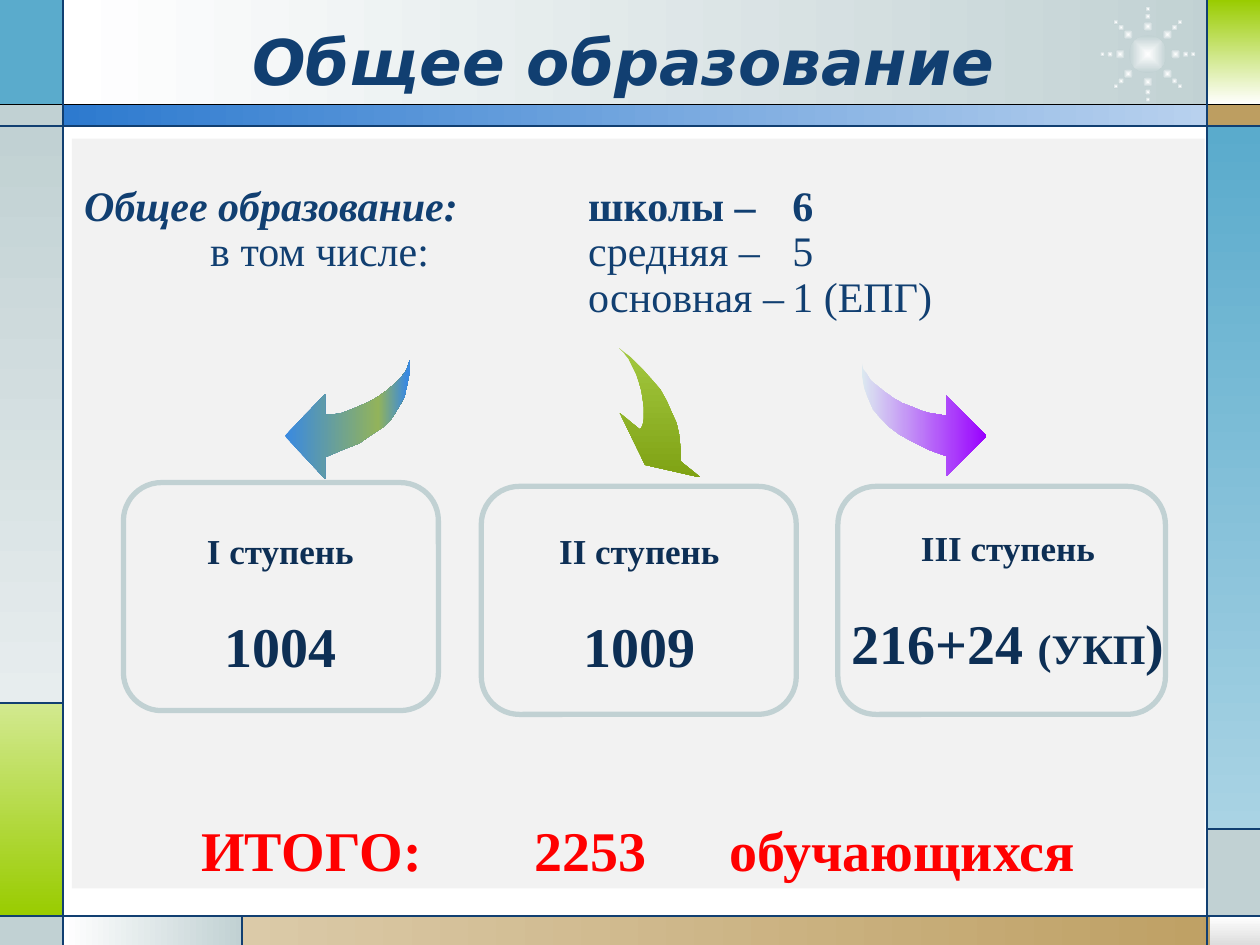
from copy import deepcopy
from math import cos, pi, sin

from lxml import etree
from pptx import Presentation
from pptx.dml.color import RGBColor
from pptx.enum import shapes, text
from pptx.oxml.ns import qn
from pptx.util import Inches, Pt

SERIF = "Times New Roman"
NAVY, DEEP_NAVY, SILVER, RED = "113F71", "0D2F55", "C1D1D3", "FF0000"
RIGHT, DOWN = 0, 270

FRAME = [
    ((0.5, 0, 9.27, 0.84), ["FFFFFF", SILVER], RIGHT),
    ((0, 0, 0.5, 0.84), ["5AABCC"], RIGHT),
    ((0, 0.83, 0.5, 0.17), [SILVER], RIGHT),
    ((0, 1, 0.5, 4.58), [SILVER, "E7EDEE"], DOWN),
    ((0, 5.58, 0.5, 1.69), ["D2E98F", "99CC00"], DOWN),
    ((0, 7.27, 0.5, 0.23), [SILVER], RIGHT),
    ((0.5, 7.27, 1.42, 0.23), ["FFFFFF", SILVER], RIGHT),
    ((1.92, 7.27, 8.08, 0.23), ["DBCAA8", "BD9E61"], RIGHT),
    ((9.6, 7.27, 0.4, 0.23), ["FFFFFF", "DDDDDD"], DOWN),
    ((9.58, 6.58, 0.42, 0.69), [SILVER], RIGHT),
    ((9.58, 1, 0.42, 5.58), ["5AABCC", "A9D3E4"], DOWN),
    ((9.58, 0.83, 0.42, 0.17), ["BD9E61"], RIGHT),
    ((9.58, 0, 0.42, 0.83), ["99CC00", "FFFFFF"], DOWN),
    ((0.5, 0.83, 9.08, 0.17), ["2D7ACF", "B8D1EE"], RIGHT),
]
RULES = [
    (0, 0.83, 10, 0.83, "000000"),
    (0, 1, 10, 1, NAVY),
    (0, 7.27, 10, 7.27, NAVY),
    (0.5, 0, 0.5, 7.5, NAVY),
    (9.58, 0, 9.58, 7.5, NAVY),
    (0, 5.58, 0.5, 5.58, NAVY),
    (1.92, 7.27, 1.92, 7.5, NAVY),
    (9.58, 6.58, 10, 6.58, NAVY),
]
LEFT_ARROW = [
    (3.25, 2.86), (3.25, 2.96), (3.23, 3.06), (3.21, 3.15), (3.16, 3.24), (3.11, 3.32),
    (3.04, 3.39), (2.95, 3.45), (2.85, 3.52), (2.72, 3.57), (2.58, 3.63), (2.58, 3.8),
    (2.26, 3.46), (2.58, 3.13), (2.58, 3.29), (2.64, 3.29), (2.71, 3.28), (2.79, 3.25),
    (2.86, 3.22), (2.93, 3.19), (3, 3.15), (3.07, 3.1), (3.13, 3.05), (3.18, 3),
    (3.22, 2.95), (3.24, 2.9),
]
MIDDLE_ARROW = [
    (4.91, 2.76), (5.01, 2.84), (5.1, 2.93), (5.17, 3.01), (5.24, 3.09), (5.29, 3.18),
    (5.33, 3.27), (5.37, 3.36), (5.39, 3.45), (5.4, 3.55), (5.4, 3.66), (5.56, 3.79),
    (5.12, 3.69), (4.92, 3.28), (5.08, 3.41), (5.1, 3.38), (5.11, 3.33), (5.11, 3.23),
    (5.1, 3.16), (5.09, 3.1), (5.07, 3.03), (5.05, 2.97), (5.02, 2.91), (4.99, 2.85),
    (4.95, 2.8),
]
RIGHT_ARROW = [
    (6.84, 2.88), (6.84, 2.98), (6.86, 3.08), (6.89, 3.16), (6.93, 3.25), (6.99, 3.32),
    (7.06, 3.39), (7.14, 3.45), (7.25, 3.51), (7.37, 3.57), (7.51, 3.62), (7.51, 3.78),
    (7.83, 3.46), (7.51, 3.14), (7.51, 3.3), (7.45, 3.29), (7.38, 3.28), (7.31, 3.26),
    (7.24, 3.23), (7.16, 3.2), (7.09, 3.16), (7.02, 3.11), (6.97, 3.07), (6.91, 3.02),
    (6.88, 2.97), (6.85, 2.93),
]
STAGES = [
    ((0.98, 3.83, 2.5, 1.81), (1.06, 4.15, 2.33, 1.65), "I ступень", [("1004", 32)]),
    ((3.82, 3.86, 2.5, 1.81), (3.91, 4.15, 2.33, 1.65), "II ступень", [("1009", 32)]),
    ((6.65, 3.86, 2.6, 1.81), (6.5, 4.13, 3, 1.31), "III ступень",
     [("216+24 ", 32), ("(УКП", 24), (")", 32)]),
]


def color(value):
    """Turn a hex string into a colour."""
    return RGBColor.from_string(value)


def paint(shape, colors, angle=RIGHT, positions=(0, 1)):
    """Fill a shape with one colour or a gradient, without line or shadow."""
    shape.shadow.inherit = False
    shape.line.fill.background()
    if len(colors) == 1:
        shape.fill.solid()
        shape.fill.fore_color.rgb = color(colors[0])
        return
    shape.fill.gradient()
    shape.fill.gradient_angle = angle
    stop_list = next(shape._element.spPr.iter(qn("a:gsLst")))
    for _ in colors[2:]:
        stop_list.append(deepcopy(stop_list[0]))
    for stop, value, position in zip(shape.fill.gradient_stops, colors, positions):
        stop.color.rgb = color(value)
        stop.position = position


def add_block(parent, kind, box, colors, angle=RIGHT):
    """Add a filled preset shape."""
    shape = parent.add_shape(kind, *map(Inches, box))
    paint(shape, colors, angle)
    return shape


def add_glow(group, x, y, size):
    """Add a dot centred on a point, white in its middle."""
    box = (x - size / 2, y - size / 2, size, size)
    dot = add_block(group.shapes, shapes.MSO_SHAPE.OVAL, box, ["FFFFFF", SILVER])
    linear = next(dot._element.spPr.iter(qn("a:lin")))
    radial = etree.Element(qn("a:path"), {"path": "shape"})
    etree.SubElement(radial, qn("a:fillToRect"), dict.fromkeys("ltrb", "50000"))
    linear.getparent().replace(linear, radial)


def add_sun(slide, x, y):
    """Add a glowing centre with eight rays of three dots."""
    group = slide.shapes.add_group_shape()
    add_glow(group, x, y, 0.3)
    for ray in range(8):
        angle = ray * pi / 4
        for radius, size in ((0.22, 0.08), (0.3, 0.05), (0.36, 0.04)):
            add_glow(group, x + radius * cos(angle), y + radius * sin(angle), size)


def add_rule(slide, x1, y1, x2, y2, value):
    """Add a thin straight line."""
    line = slide.shapes.add_connector(
        shapes.MSO_CONNECTOR.STRAIGHT, *map(Inches, (x1, y1, x2, y2)))
    line.line.color.rgb = color(value)
    line.line.width = Pt(0.75)
    etree.SubElement(line._element.spPr, qn("a:effectLst"))


def add_arrow(slide, points, colors, angle=RIGHT, positions=(0, 1)):
    """Add a curved arrow from its outline."""
    outline = [(Inches(x), Inches(y)) for x, y in points]
    builder = slide.shapes.build_freeform(*outline[0])
    builder.add_line_segments(outline[1:], close=True)
    paint(builder.convert_to_shape(), colors, angle, positions)


def add_run(paragraph, words, size, value, bold=True, italic=False, font=SERIF):
    """Add one formatted run."""
    run = paragraph.add_run()
    run.text = words
    run.font.size, run.font.name = Pt(size), font
    run.font.bold, run.font.italic = bold, italic
    run.font.color.rgb = color(value)


def set_tabs(paragraph, stops):
    """Give a paragraph left tab stops, in inches."""
    tabs = etree.SubElement(paragraph._p.get_or_add_pPr(), qn("a:tabLst"))
    for stop in stops:
        etree.SubElement(tabs, qn("a:tab"), {"pos": str(Inches(stop)), "algn": "l"})


def set_title(slide, words):
    """Place and format the title above the frame."""
    title = slide.shapes.title
    slide.shapes._spTree.append(title._element)
    title.left, title.top, title.width, title.height = map(Inches, (0.35, 0.13, 9.37, 0.63))
    title.text_frame.vertical_anchor = text.MSO_ANCHOR.TOP
    paragraph = title.text_frame.paragraphs[0]
    paragraph.alignment = text.PP_ALIGN.CENTER
    add_run(paragraph, words, 36, NAVY, italic=True, font="DejaVu Sans")


def add_panel(slide):
    """Add the grey panel with the school counts and the total."""
    panel = add_block(
        slide.shapes, shapes.MSO_SHAPE.RECTANGLE, (0.57, 1.1, 8.99, 5.95), ["F2F2F2"])
    frame = panel.text_frame
    frame.word_wrap = True
    frame.vertical_anchor = text.MSO_ANCHOR.TOP
    frame.margin_top = Inches(0.37)
    lines = [
        [("Общее образование:", True, True), ("\tшколы –\t6", True, False)],
        [("\tв том числе:\tсредняя –\t5", False, False)],
        [("\t\tосновная –\t1 (ЕПГ)", False, False)],
    ]
    for index, runs in enumerate(lines):
        paragraph = frame.add_paragraph() if index else frame.paragraphs[0]
        paragraph.alignment = text.PP_ALIGN.LEFT
        paragraph.line_spacing = 0.9
        set_tabs(paragraph, (1, 4, 5.62))
        for words, bold, italic in runs:
            add_run(paragraph, words, 24, NAVY, bold, italic)
    total = frame.add_paragraph()
    total.alignment = text.PP_ALIGN.LEFT
    total.line_spacing = 0.9
    total.space_before = Pt(287)
    set_tabs(total, (0.93, 3.57, 5.12))
    add_run(total, "\tИТОГО:\t2253\tобучающихся", 32, RED)


def add_stage(slide, card_box, text_box, name, count):
    """Add an outlined card with a stage name and its pupil count."""
    card = slide.shapes.add_shape(shapes.MSO_SHAPE.ROUNDED_RECTANGLE, *map(Inches, card_box))
    card.shadow.inherit = False
    card.fill.background()
    card.line.color.rgb = color(SILVER)
    card.line.width = Pt(3)
    frame = slide.shapes.add_textbox(*map(Inches, text_box)).text_frame
    frame.word_wrap = True
    heading, figure = frame.paragraphs[0], frame.add_paragraph()
    heading.alignment = figure.alignment = text.PP_ALIGN.CENTER
    figure.space_before = Pt(23)
    add_run(heading, name, 20, DEEP_NAVY)
    for words, size in count:
        add_run(figure, words, size, DEEP_NAVY)


def main():
    """Build the slide and save it."""
    presentation = Presentation()
    presentation.slide_width, presentation.slide_height = Inches(10), Inches(7.5)
    slide = presentation.slides.add_slide(presentation.slide_layouts[5])
    for box, colors, angle in FRAME:
        add_block(slide.shapes, shapes.MSO_SHAPE.RECTANGLE, box, colors, angle)
    add_sun(slide, 9.11, 0.43)
    for rule in RULES:
        add_rule(slide, *rule)
    add_panel(slide)
    set_title(slide, "Общее образование ")
    add_arrow(slide, LEFT_ARROW, ["3989E1", "92B35B", "3989E1"], RIGHT, (0, 0.75, 0.98))
    add_arrow(slide, MIDDLE_ARROW, ["A3C840", "7FA214"], DOWN)
    add_arrow(slide, RIGHT_ARROW, ["DCE9F0", "9900FF"])
    for stage in STAGES:
        add_stage(slide, *stage)
    presentation.save("out.pptx")


if __name__ == "__main__":
    main()
